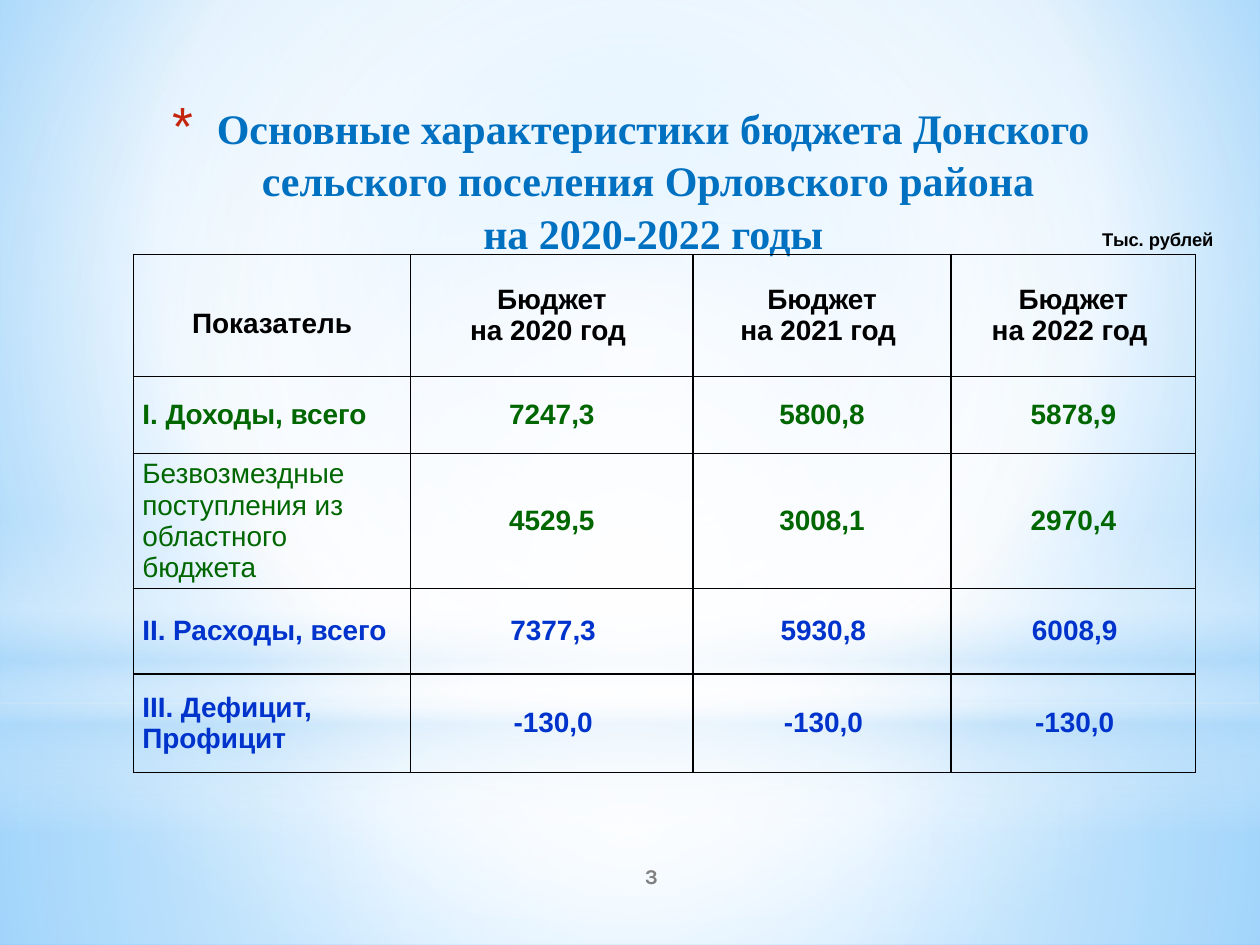
from dataclasses import dataclass

from lxml.etree import SubElement
from pptx import Presentation
from pptx.dml.color import RGBColor
from pptx.enum.shapes import MSO_SHAPE
from pptx.enum.text import MSO_ANCHOR, MSO_AUTO_SIZE, PP_ALIGN
from pptx.oxml.ns import qn
from pptx.util import Inches, Pt


@dataclass(frozen=True)
class Theme:
    title: str = "0070C0"
    bullet: str = "C3260C"
    text: str = "000000"
    income: str = "006600"
    spending: str = "0033CC"
    page: str = "808080"
    white: str = "FFFFFF"
    haze: str = "B4DCFA"
    sky: str = "9ED5FF"
    deep_sky: str = "5BB9FF"
    title_font: str = "Times New Roman"
    body_font: str = "Arial"
    page_font: str = "Karla"
    title_size: float = 24
    table_size: float = 16
    page_size: float = 12
    unit_size: float = 10.5


THEME = Theme()
CENTER = (50, 50, 50, 50)
COLUMN_WIDTHS = (2.2, 2.24, 2.05, 1.94)
ROW_HEIGHTS = (0.97, 0.61, 1.07, 0.68, 0.78)
HEADER = ["Показатель"] + [f"Бюджет\nна {year} год " for year in (2020, 2021, 2022)]
# Label, values, colour, bold label, first-line indent of the values
BUDGET_ROWS = (
    ("I. Доходы, всего", ("7247,3", "5800,8", "5878,9"), THEME.income, True, -0.07),
    ("Безвозмездные поступления из областного бюджета",
     ("4529,5", "3008,1", "2970,4"), THEME.income, False, -0.07),
    ("II. Расходы, всего", ("7377,3", "5930,8", "6008,9"), THEME.spending, True, 0.02),
    ("III. Дефицит, Профицит", ("-130,0",) * 3, THEME.spending, True, 0.02),
)


def add_element(parent, tag, **attributes):
    return SubElement(parent, qn(tag), {key: str(value) for key, value in attributes.items()})


def set_gradient(properties, stops, focus=None):
    """Replace a solid fill by a gradient: circular with a focus, else vertical."""
    solid = properties.find(qn("a:solidFill"))
    gradient = add_element(properties, "a:gradFill", rotWithShape=1)
    properties.replace(solid, gradient)
    stop_list = add_element(gradient, "a:gsLst")
    for position, color, opacity in stops:
        stop = add_element(stop_list, "a:gs", pos=position * 1000)
        color_element = add_element(stop, "a:srgbClr", val=color)
        if opacity < 100:
            add_element(color_element, "a:alpha", val=opacity * 1000)
    if focus:
        circle = add_element(gradient, "a:path", path="circle")
        sides = {side: share * 1000 for side, share in zip("ltrb", focus)}
        add_element(circle, "a:fillToRect", **sides)
    else:
        add_element(gradient, "a:lin", ang=90 * 60000, scaled=0)


def add_glow(slide, kind, box, stops, focus=CENTER):
    shape = slide.shapes.add_shape(kind, *map(Inches, box))
    shape.shadow.inherit = False
    shape.line.fill.background()
    shape.fill.solid()
    set_gradient(shape.element.spPr, stops, focus)


def add_backdrop(slide):
    slide.background.fill.solid()
    set_gradient(
        next(slide.element.iter(qn("p:bgPr"))),
        ((0, THEME.sky, 100), (60, THEME.white, 100), (100, THEME.deep_sky, 100)),
        (20, 10, 20, 60),
    )
    white, haze = THEME.white, THEME.haze
    add_glow(slide, MSO_SHAPE.RECTANGLE, (0, 5.58, 10, 1.92),
             ((0, white, 91), (37, white, 76), (100, haze, 79)))
    add_glow(slide, MSO_SHAPE.RECTANGLE, (0, 0, 10, 5.58),
             ((0, white, 89), (48, white, 62), (100, haze, 79)))
    add_glow(slide, MSO_SHAPE.RECTANGLE, (0, 4.12, 10, 2.5),
             ((0, white, 0), (29, white, 30), (45, haze, 40),
              (55, white, 26), (65, haze, 60), (100, white, 0)), None)
    add_glow(slide, MSO_SHAPE.OVAL, (0, 1.75, 10, 5.58),
             ((0, white, 100), (56, white, 0)))


def format_text(text_frame, size, color, font, alignment, bold=True):
    for paragraph in text_frame.paragraphs:
        paragraph.alignment = alignment
        for run in paragraph.runs:
            run.font.size = Pt(size)
            run.font.name = font
            run.font.bold = bold
            run.font.color.rgb = RGBColor.from_string(color)


def add_label(slide, box, text, size, color, font, alignment, anchor=MSO_ANCHOR.TOP):
    text_frame = slide.shapes.add_textbox(*map(Inches, box)).text_frame
    text_frame.word_wrap = True
    text_frame.vertical_anchor = anchor
    text_frame.text = text
    format_text(text_frame, size, color, font, alignment)


def set_title(slide):
    title = slide.shapes.title
    title.left, title.top, title.width, title.height = map(Inches, (0.51, 0.74, 9, 0.87))
    title.element.getparent().append(title.element)  # in front of the backdrop
    text_frame = title.text_frame
    text_frame.auto_size = MSO_AUTO_SIZE.NONE
    text_frame.word_wrap = True
    text_frame.vertical_anchor = MSO_ANCHOR.TOP
    paragraph = text_frame.paragraphs[0]
    paragraph.text = ("Основные характеристики бюджета Донского сельского поселения "
                      "Орловского района \vна 2020-2022 годы")
    paragraph.line_spacing = 1.05
    format_text(text_frame, THEME.title_size, THEME.title, THEME.title_font, PP_ALIGN.CENTER)
    # Asterisk bullet with a hanging indent
    properties = paragraph._p.get_or_add_pPr()
    properties.set("marL", str(Inches(0.35)))
    properties.set("indent", str(Inches(-0.35)))
    add_element(add_element(properties, "a:buClr"), "a:srgbClr", val=THEME.bullet)
    add_element(properties, "a:buSzPct", val=128000)
    add_element(properties, "a:buFont", typeface=THEME.body_font)
    add_element(properties, "a:buChar", char="*")


def fill_cell(cell, text, color, alignment=PP_ALIGN.CENTER, bold=True, indent=0):
    cell.margin_left = cell.margin_right = Inches(0.07)
    cell.margin_top = cell.margin_bottom = 0
    cell.vertical_anchor = MSO_ANCHOR.MIDDLE
    properties = cell._tc.get_or_add_tcPr()
    for side in "LRTB":
        border = add_element(properties, f"a:ln{side}", w=Pt(1))
        add_element(add_element(border, "a:solidFill"), "a:srgbClr", val=THEME.text)
    cell.fill.background()
    cell.text_frame.text = text
    format_text(cell.text_frame, THEME.table_size, color, THEME.body_font, alignment, bold)
    if indent:
        cell.text_frame.paragraphs[0]._p.get_or_add_pPr().set("indent", str(Inches(indent)))


def add_budget_table(slide):
    frame = slide.shapes.add_table(
        len(ROW_HEIGHTS), len(COLUMN_WIDTHS), Inches(1.06), Inches(2.02),
        Inches(sum(COLUMN_WIDTHS)), Inches(sum(ROW_HEIGHTS)))
    table = frame.table
    table.first_row = table.horz_banding = False
    for column, width in zip(table.columns, COLUMN_WIDTHS):
        column.width = Inches(width)
    for row, height in zip(table.rows, ROW_HEIGHTS):
        row.height = Inches(height)
    for column, heading in enumerate(HEADER):
        fill_cell(table.cell(0, column), heading, THEME.text, indent=0 if column else -0.07)
    table.cell(0, 0).text_frame.paragraphs[0].line_spacing = 1.5
    for row, (label, values, color, bold, indent) in enumerate(BUDGET_ROWS, start=1):
        fill_cell(table.cell(row, 0), label, color, PP_ALIGN.LEFT, bold)
        for column, value in enumerate(values, start=1):
            fill_cell(table.cell(row, column), value, color, indent=indent)


def main():
    presentation = Presentation()
    presentation.slide_width, presentation.slide_height = Inches(10), Inches(7.5)
    slide = presentation.slides.add_slide(presentation.slide_layouts[5])
    add_backdrop(slide)
    # Page number, title, table and its unit
    add_label(slide, (4.17, 6.75, 2, 0.4), "3", THEME.page_size, THEME.page,
              THEME.page_font, PP_ALIGN.CENTER, MSO_ANCHOR.MIDDLE)
    set_title(slide)
    add_budget_table(slide)
    add_label(slide, (8.31, 1.76, 1.42, 0.28), "Тыс. рублей", THEME.unit_size, THEME.text,
              THEME.body_font, PP_ALIGN.RIGHT)
    presentation.save("out.pptx")


if __name__ == "__main__":
    main()
